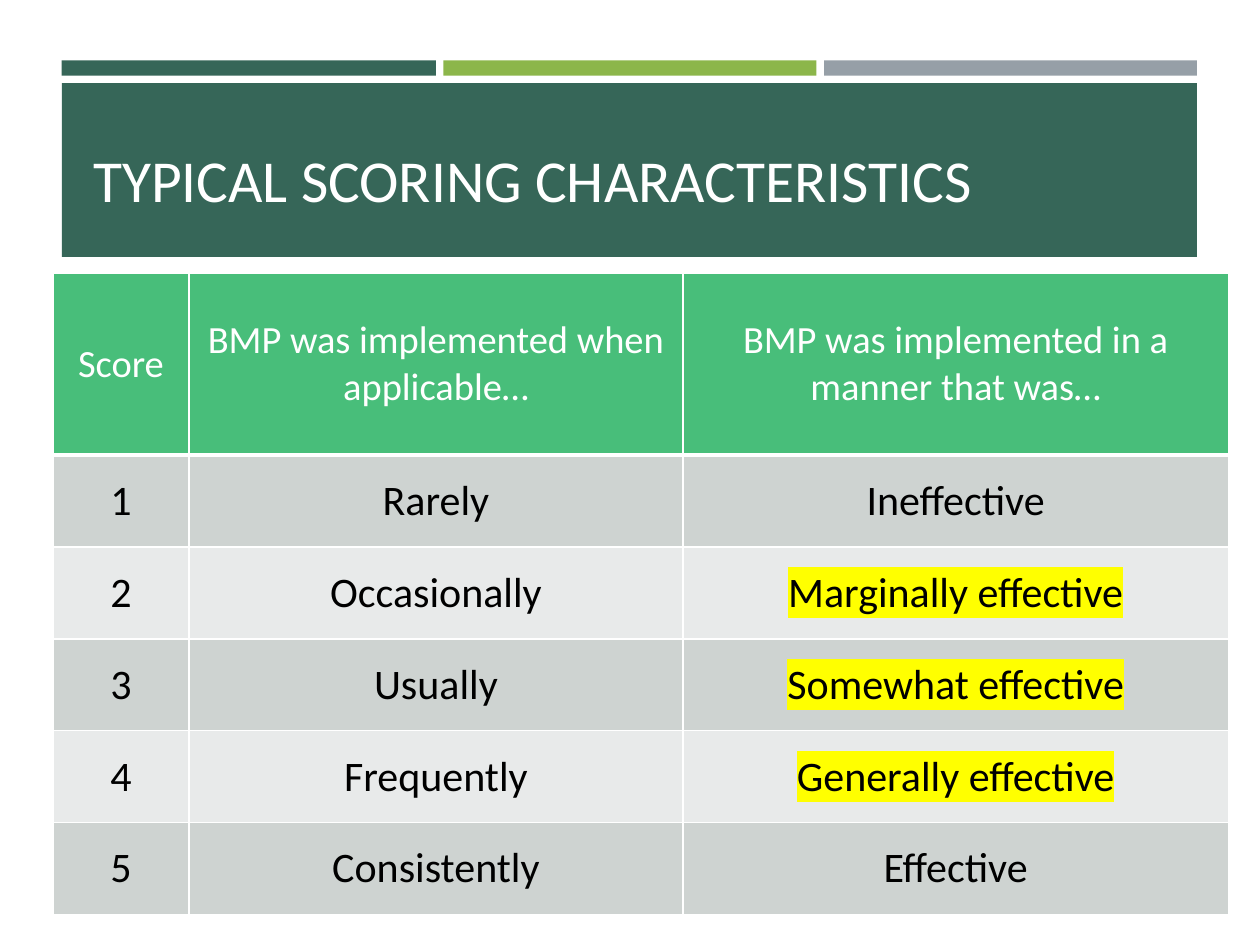
from typing import NamedTuple

from lxml.etree import SubElement
from pptx import Presentation
from pptx.dml.color import RGBColor
from pptx.enum.shapes import MSO_SHAPE as Shape
from pptx.enum.text import MSO_ANCHOR as Anchor, PP_ALIGN as Align
from pptx.oxml.ns import qn
from pptx.util import Inches, Pt

FONT = "Calibri"
COLORS = {
    "white": "FFFFFF",
    "black": "000000",
    "pine": "366658",
    "lime": "8CB64A",
    "slate": "969FA7",
    "header": "48BE7A",
    "odd_row": "CED3D1",
    "even_row": "E8EAEA",
    "marker": "FFFF00",
}


class Bar(NamedTuple):
    left: float
    top: float
    width: float
    height: float
    color: str


class ScoreRow(NamedTuple):
    score: str
    frequency: str
    quality: str
    marked: bool = False


BARS = [
    Bar(0.49, 0.48, 2.97, 0.12, "pine"),
    Bar(3.52, 0.48, 2.96, 0.12, "lime"),
    Bar(6.54, 0.48, 2.96, 0.12, "slate"),
    Bar(0.49, 0.66, 9.01, 1.38, "pine"),
]
HEADINGS = ScoreRow(
    "Score",
    "BMP was implemented when applicable…",
    "BMP was implemented in a manner that was…",
)
SCORES = [
    ScoreRow("1", "Rarely", "Ineffective"),
    ScoreRow("2", "Occasionally", "Marginally effective", marked=True),
    ScoreRow("3", "Usually", "Somewhat effective", marked=True),
    ScoreRow("4", "Frequently", "Generally effective", marked=True),
    ScoreRow("5", "Consistently", "Effective"),
]
COLUMN_WIDTHS = [1.08, 3.92, 4.33]
HEADER_HEIGHT, ROW_HEIGHT = 1.44, 0.73


def rgb(name: str) -> RGBColor:
    return RGBColor.from_string(COLORS[name])


def write(frame, text: str, *, size: float, color: str, align=Align.LEFT,
          marked: bool = False) -> None:
    """Put one formatted line in a text frame, highlighted if marked."""
    para = frame.paragraphs[0]
    para.alignment = align
    span = para.add_run()
    span.text = text
    span.font.name = FONT
    span.font.size = Pt(size)
    span.font.bold = False
    span.font.color.rgb = rgb(color)
    if marked:
        properties = span.font._element
        highlight = SubElement(properties, qn("a:highlight"))
        SubElement(highlight, qn("a:srgbClr"), val=COLORS["marker"])
        properties.find(qn("a:solidFill")).addnext(highlight)


def draw_bar(page, bar: Bar) -> None:
    box = page.shapes.add_shape(Shape.RECTANGLE, *map(Inches, bar[:4]))
    box.shadow.inherit = False
    box.fill.solid()
    box.fill.fore_color.rgb = rgb(bar.color)
    box.line.fill.background()


def draw_title(page, text: str) -> None:
    title = page.shapes.title
    title.left, title.top = Inches(0.64), Inches(0.75)
    title.width, title.height = Inches(8.74), Inches(1)
    title.text_frame.vertical_anchor = Anchor.BOTTOM
    write(title.text_frame, text, size=34, color="white")
    page.shapes._spTree.append(title._element)  # in front of the band


def set_borders(cell, **widths: float) -> None:
    """Draw white borders, with widths in points by side (L, R, T, B)."""
    properties = cell._tc.get_or_add_tcPr()
    for side, width in widths.items():
        line = SubElement(properties, qn(f"a:ln{side}"), w=str(Pt(width)))
        fill = SubElement(line, qn("a:solidFill"))
        SubElement(fill, qn("a:srgbClr"), val=COLORS["white"])


def draw_table(page, rows: list[ScoreRow]) -> None:
    heights = [HEADER_HEIGHT] + [ROW_HEIGHT] * (len(rows) - 1)
    table = page.shapes.add_table(
        len(rows), len(COLUMN_WIDTHS), Inches(0.42), Inches(2.17),
        Inches(sum(COLUMN_WIDTHS)), Inches(sum(heights))).table
    for column, width in zip(table.columns, COLUMN_WIDTHS):
        column.width = Inches(width)
    for index, (row, height) in enumerate(zip(rows, heights)):
        table.rows[index].height = Inches(height)
        is_header = index == 0
        fill = "header" if is_header else ("even_row", "odd_row")[index % 2]
        for column, text in enumerate(row[:3]):
            cell = table.cell(index, column)
            set_borders(cell, L=1, R=1, T=3 if index == 1 else 1,
                        B=3 if is_header else 1)
            cell.fill.solid()
            cell.fill.fore_color.rgb = rgb(fill)
            cell.vertical_anchor = Anchor.MIDDLE
            write(cell.text_frame, text, align=Align.CENTER,
                  size=22 if is_header else 24,
                  color="white" if is_header else "black",
                  marked=row.marked and column == 2)


def main() -> None:
    deck = Presentation()
    deck.slide_width, deck.slide_height = Inches(10), Inches(7.5)
    page = deck.slides.add_slide(deck.slide_layouts[5])
    for bar in BARS:
        draw_bar(page, bar)
    draw_title(page, "TYPICAL SCORING CHARACTERISTICS")
    draw_table(page, [HEADINGS, *SCORES])
    deck.save("out.pptx")


if __name__ == "__main__":
    main()
